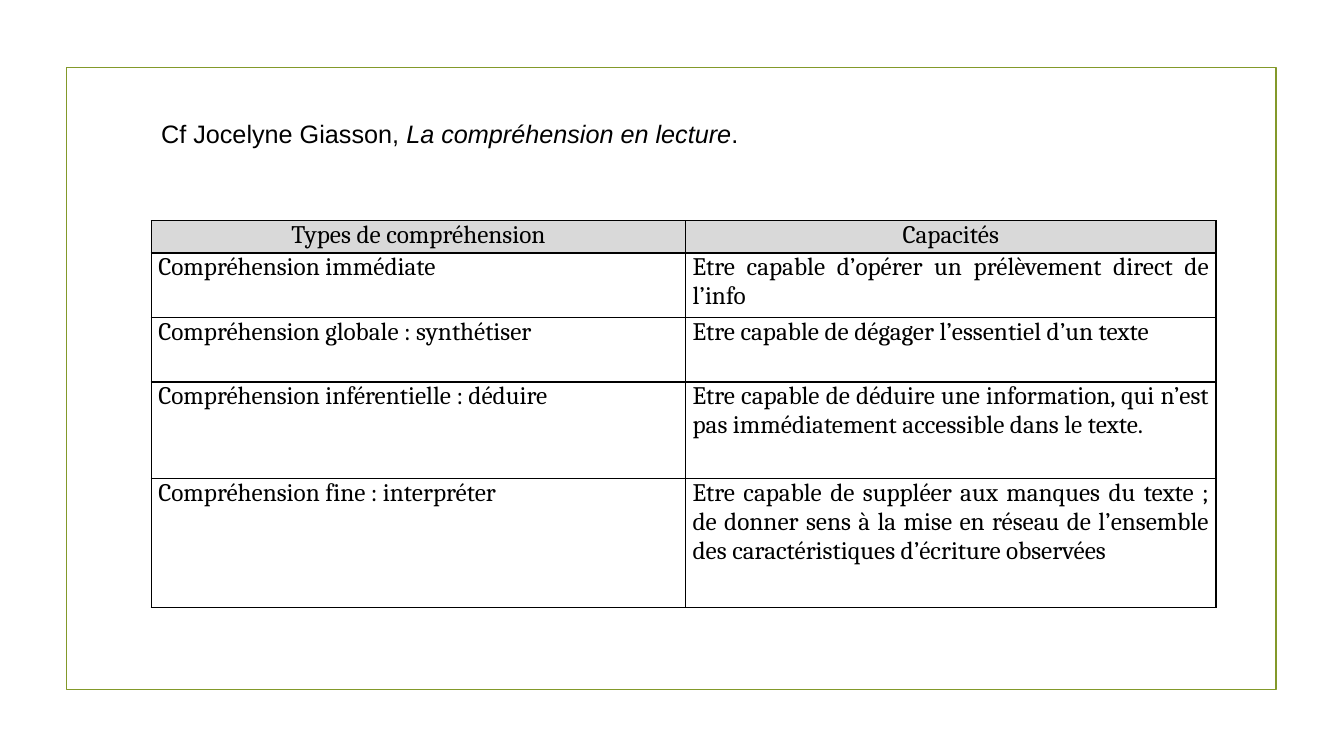
import pptx
import pptx.dml.color
import pptx.enum.shapes
import pptx.enum.text
import pptx.oxml
import pptx.oxml.ns
import pptx.util

RGBColor = pptx.dml.color.RGBColor
Inches = pptx.util.Inches
Pt = pptx.util.Pt
ALIGN = pptx.enum.text.PP_ALIGN

GREEN = RGBColor(0x83, 0x99, 0x2A)
BLACK = RGBColor(0x00, 0x00, 0x00)
GREY = RGBColor(0xD9, 0xD9, 0xD9)
WHITE = RGBColor(0xFF, 0xFF, 0xFF)

# Slide size, left edge of the content, and height of one table line
WIDTH, HEIGHT = 13.33, 7.5
LEFT = 1.5
LINE = 0.32
COLUMNS = (5.3, 5.26)
ROW_LINES = (1, 2, 2, 3, 4)

REFERENCE = [
    ("Cf Jocelyne Giasson, ", False),
    ("La compréhension en lecture", True),
    (".", False),
]

ROWS = [
    ("Types de compréhension", "Capacités"),
    ("Compréhension immédiate",
     "Etre capable d’opérer un prélèvement direct de l’info"),
    ("Compréhension globale : synthétiser",
     "Etre capable de dégager l’essentiel d’un texte"),
    ("Compréhension inférentielle : déduire",
     "Etre capable de déduire une information, qui n’est pas immédiatement "
     "accessible dans le texte."),
    ("Compréhension fine : interpréter",
     "Etre capable de suppléer aux manques du texte ; de donner sens à la "
     "mise en réseau de l’ensemble des caractéristiques d’écriture observées"),
]


def set_all(target, values):
    for name, value in values.items():
        setattr(target, name, value)


def add_run(p, text, font, italic=False):
    r = p.add_run()
    r.text = text
    set_all(r.font, {"name": font, "size": Pt(18), "italic": italic})
    r.font.color.rgb = BLACK


def add_frame(s):
    sp = s.shapes.add_shape(
        pptx.enum.shapes.MSO_SHAPE.RECTANGLE,
        Inches(0.66), Inches(0.67), Inches(0.9 * WIDTH), Inches(6.17))
    sp.shadow.inherit = False
    sp.fill.background()
    sp.line.color.rgb = GREEN
    sp.line.width = Pt(1.25)


def add_reference(s):
    sp = s.shapes.add_textbox(
        Inches(LEFT), Inches(1.12), Inches(WIDTH / 2), Inches(0.71))
    tf = sp.text_frame
    tf.word_wrap = True
    for text, italic in REFERENCE:
        add_run(tf.paragraphs[0], text, "Arial", italic)


def add_borders(cell):
    tc_pr = cell._tc.get_or_add_tcPr()
    for side in ("lnL", "lnR", "lnT", "lnB"):
        tc_pr.append(pptx.oxml.parse_xml(
            f'<a:{side} {pptx.oxml.ns.nsdecls("a")} w="{Pt(1)}">'
            f'<a:solidFill><a:srgbClr val="{BLACK}"/></a:solidFill></a:{side}>'))


def fill_cell(cell, text, is_header):
    set_all(cell, {"margin_left": Inches(0.07), "margin_right": Inches(0.07),
                   "margin_top": 0, "margin_bottom": 0})
    add_borders(cell)
    cell.fill.solid()
    cell.fill.fore_color.rgb = GREY if is_header else WHITE
    p = cell.text_frame.paragraphs[0]
    p.alignment = ALIGN.CENTER if is_header else ALIGN.JUSTIFY
    add_run(p, text, "Cambria")


def add_skills_table(s):
    table = s.shapes.add_table(
        len(ROWS), len(COLUMNS), Inches(LEFT), Inches(2.19),
        Inches(sum(COLUMNS)), Inches(LINE * sum(ROW_LINES))).table
    for column, width in zip(table.columns, COLUMNS):
        column.width = Inches(width)
    for i, (lines, texts) in enumerate(zip(ROW_LINES, ROWS)):
        table.rows[i].height = Inches(LINE * lines)
        for j, text in enumerate(texts):
            fill_cell(table.cell(i, j), text, is_header=i == 0)


def main():
    prs = pptx.Presentation()
    set_all(prs, {"slide_width": Inches(WIDTH), "slide_height": Inches(HEIGHT)})
    s = prs.slides.add_slide(prs.slide_layouts[6])

    # Border around the page
    add_frame(s)
    # Types of comprehension and matching skills
    add_skills_table(s)
    # Book reference above the table
    add_reference(s)

    prs.save("out.pptx")


if __name__ == "__main__":
    main()
